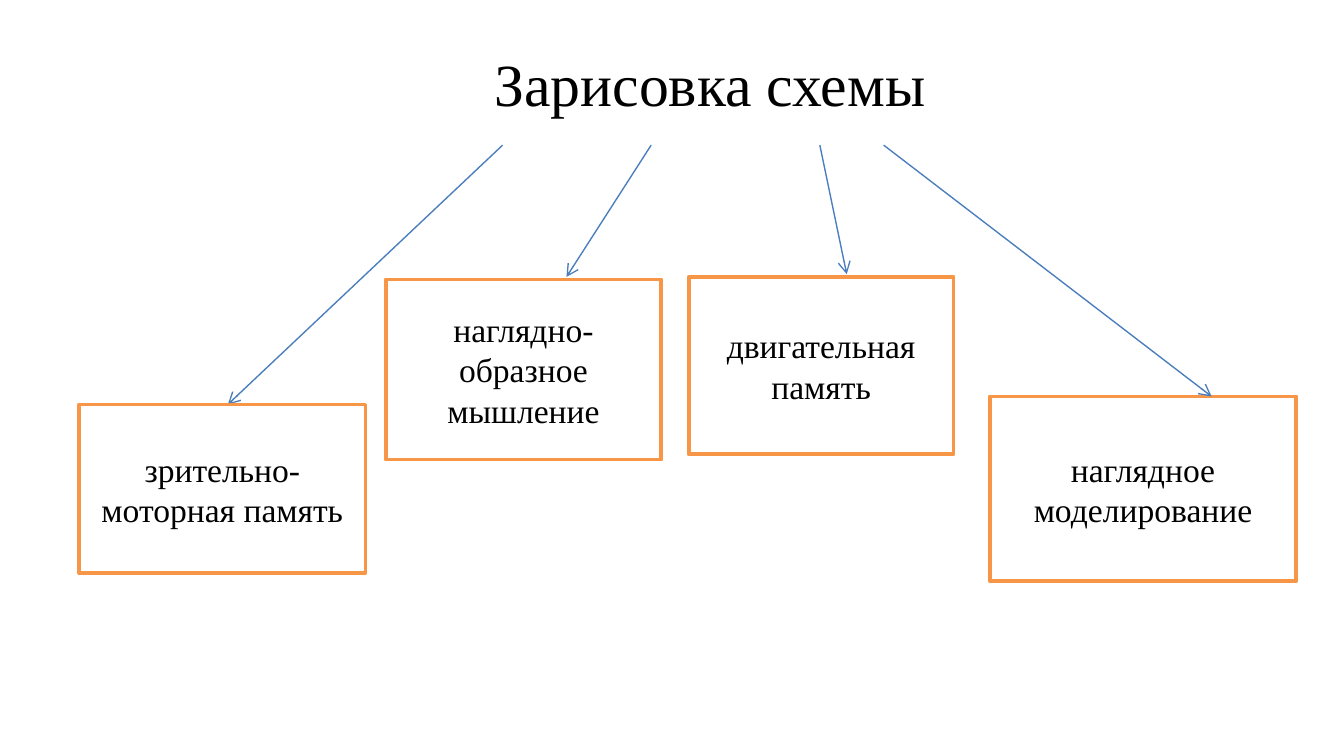
from lxml.etree import SubElement
from pptx import Presentation
from pptx.dml.color import RGBColor
from pptx.enum.shapes import MSO_CONNECTOR, MSO_SHAPE
from pptx.enum.text import MSO_ANCHOR, MSO_AUTO_SIZE, PP_ALIGN
from pptx.oxml.ns import qn
from pptx.util import Pt

PX = 4572
SLIDE_SIZE = (2000, 1125)
FONT = "Times New Roman"
COLORS = {"text": "000000", "fill": "FFFFFF", "border": "F79646", "arrow": "4B7EBC"}

TITLE = ("Зарисовка схемы", (716, 44, 694, 136))
SKILLS = [
    ("зрительно-моторная память", (118, 602, 426, 251)),
    ("наглядно-образное мышление", (574, 416, 410, 268)),
    ("двигательная память", (1025, 412, 394, 264)),
    ("наглядное моделирование", (1473, 590, 456, 275)),
]
ARROW_TOP = 216
ARROWS = [
    (748, (339, 602)),
    (969, (843, 412)),
    (1220, (1260, 408)),
    (1315, (1803, 590)),
]


def emu(lengths):
    return [length * PX for length in lengths]


def color(name):
    return RGBColor.from_string(COLORS[name])


def write(shape, text, size, align, spacing=1.0, after=0):
    para = shape.text_frame.paragraphs[0]
    para.alignment = align
    para.line_spacing = spacing
    para.space_after = Pt(after)
    span = para.add_run()
    span.text = text
    span.font.name = FONT
    span.font.size = Pt(size)
    span.font.color.rgb = color("text")


def add_title(page, text, place):
    box = page.shapes.add_textbox(*emu(place))
    box.text_frame.word_wrap = False
    box.text_frame.auto_size = MSO_AUTO_SIZE.SHAPE_TO_FIT_TEXT
    write(box, text, size=32, align=PP_ALIGN.LEFT, spacing=1.15, after=10)


def add_skill(page, text, place):
    box = page.shapes.add_shape(MSO_SHAPE.RECTANGLE, *emu(place))
    box.shadow.inherit = False
    box.fill.solid()
    box.fill.fore_color.rgb = color("fill")
    box.line.color.rgb = color("border")
    box.line.width = Pt(2)
    box.text_frame.word_wrap = True
    box.text_frame.vertical_anchor = MSO_ANCHOR.MIDDLE
    write(box, text, size=18, align=PP_ALIGN.CENTER)


def add_arrow(page, start, end):
    arrow = page.shapes.add_connector(
        MSO_CONNECTOR.STRAIGHT, *emu((start, ARROW_TOP, *end))
    )
    arrow.line.color.rgb = color("arrow")
    arrow.line.width = Pt(0.75)
    outline = arrow._element.spPr.find(qn("a:ln"))
    SubElement(outline, qn("a:tailEnd"), type="arrow")
    SubElement(arrow._element.spPr, qn("a:effectLst"))


def main():
    deck = Presentation()
    deck.slide_width, deck.slide_height = emu(SLIDE_SIZE)
    page = deck.slides.add_slide(deck.slide_layouts[6])
    add_title(page, *TITLE)
    for start, end in ARROWS[:-1]:
        add_arrow(page, start, end)
    for text, place in SKILLS:
        add_skill(page, text, place)
    add_arrow(page, *ARROWS[-1])
    deck.save("out.pptx")


if __name__ == "__main__":
    main()
